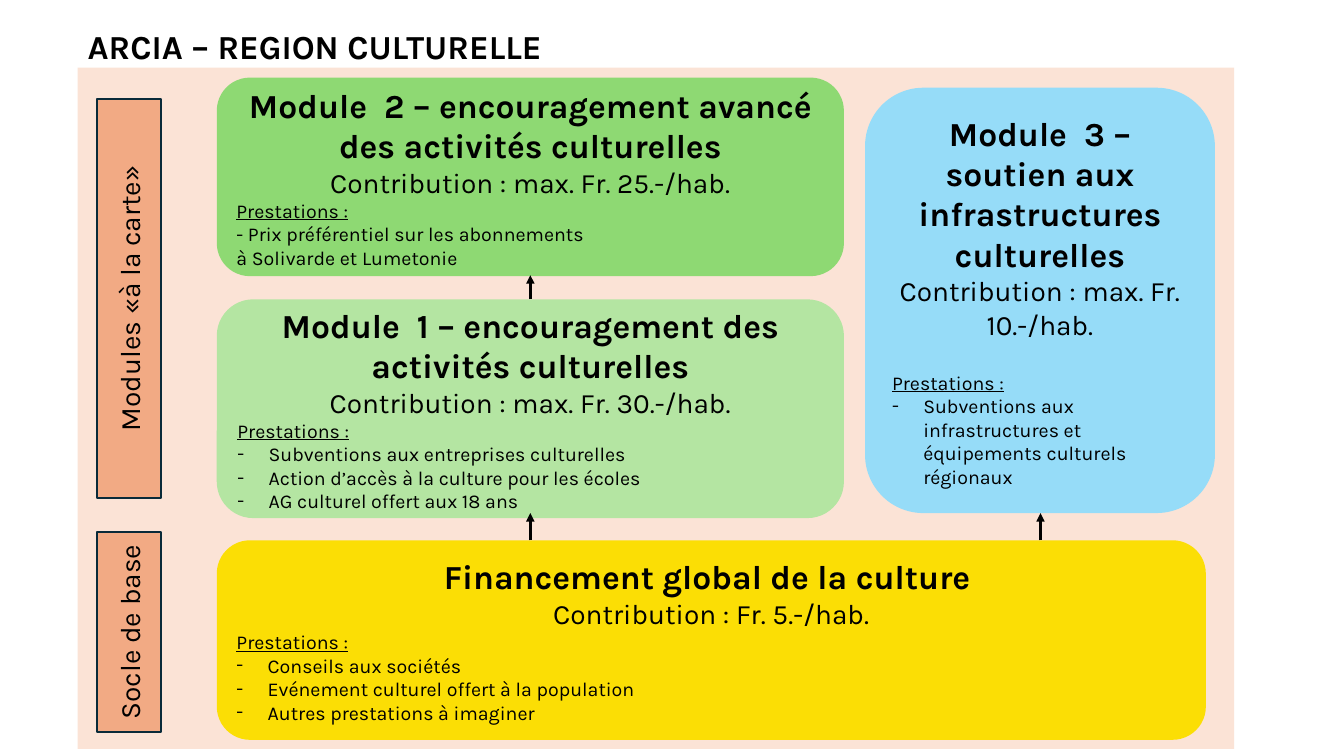
from copy import deepcopy
from dataclasses import dataclass

from lxml.etree import SubElement
from pptx import Presentation
from pptx.dml.color import RGBColor
from pptx.enum.shapes import MSO_CONNECTOR, MSO_SHAPE
from pptx.enum.text import MSO_ANCHOR, MSO_AUTO_SIZE, PP_ALIGN
from pptx.oxml.ns import qn
from pptx.shapes.autoshape import Shape
from pptx.slide import Slide
from pptx.text.text import _Paragraph as Paragraph
from pptx.util import Inches, Pt

FONT = "Karla"
BLACK = RGBColor(0x00, 0x00, 0x00)
PEACH = RGBColor(0xFB, 0xE3, 0xD6)
YELLOW = RGBColor(0xFB, 0xDE, 0x05)
LIGHT_GREEN = RGBColor(0xB4, 0xE5, 0xA2)
GREEN = RGBColor(0x8E, 0xD9, 0x73)
BLUE = RGBColor(0x96, 0xDC, 0xF8)
ORANGE = RGBColor(0xF2, 0xAA, 0x84)
NAVY = RGBColor(0x09, 0x2A, 0x39)


@dataclass
class Box:
    left: float
    top: float
    width: float
    height: float


@dataclass
class Module:
    box: Box
    color: RGBColor
    heading: str
    contribution: str
    services: list[str]
    bulleted: bool = True
    gap_before_services: float = 0


@dataclass
class SideLabel:
    box: Box
    text: str


@dataclass
class Arrow:
    x: float
    bottom: float
    top: float


BACKDROP = Box(0.77, 0.67, 11.47, 6.76)
TITLE = Box(0.77, 0.21, 5.93, 0.5)

MODULES = [
    Module(Box(2.15, 5.36, 9.81, 1.98), YELLOW,
           "Financement global de la culture ", "Contribution : Fr. 5.-/hab.",
           ["Conseils aux sociétés", "Evénement culturel offert à la population",
            "Autres prestations à imaginer"]),
    Module(Box(2.15, 2.97, 6.22, 2.17), LIGHT_GREEN,
           "Module  1 – encouragement des activités culturelles",
           "Contribution : max. Fr. 30.-/hab.",
           ["Subventions aux entreprises culturelles",
            "Action d’accès à la culture pour les écoles",
            "AG culturel offert aux 18 ans"]),
    Module(Box(2.15, 0.77, 6.22, 1.97), GREEN,
           "Module  2 – encouragement avancé des activités culturelles",
           "Contribution : max. Fr. 25.-/hab.",
           ["- Prix préférentiel sur les abonnements \và Solivarde et Lumetonie"],
           bulleted=False),
    Module(Box(8.58, 0.87, 3.47, 4.22), BLUE,
           "Module  3 – soutien aux infrastructures culturelles",
           "Contribution : max. Fr. 10.-/hab.",
           ["Subventions aux infrastructures et équipements culturels régionaux"],
           gap_before_services=21),
]

SIDE_LABELS = [
    SideLabel(Box(0.29, 5.95, 1.98, 0.64), "Socle de base"),
    SideLabel(Box(-0.7, 2.64, 3.96, 0.64), "Modules «à la carte»"),
]

ARROWS = [Arrow(10.32, 5.36, 5.09), Arrow(5.26, 5.36, 5.09), Arrow(5.26, 2.97, 2.73)]


def add_box(slide: Slide, preset: MSO_SHAPE, box: Box, color: RGBColor) -> Shape:
    shape = slide.shapes.add_shape(preset, Inches(box.left), Inches(box.top),
                                   Inches(box.width), Inches(box.height))
    shape.shadow.inherit = False
    shape.fill.solid()
    shape.fill.fore_color.rgb = color
    shape.line.fill.background()
    shape.text_frame.word_wrap = True
    shape.text_frame.vertical_anchor = MSO_ANCHOR.MIDDLE
    return shape


def format_paragraph(paragraph: Paragraph, size: float, bold: bool = False,
                     underline: bool = False,
                     alignment: PP_ALIGN = PP_ALIGN.LEFT) -> None:
    """Format every run, and give line breaks the same character properties."""
    paragraph.alignment = alignment
    for run in paragraph.runs:
        run.font.name = FONT
        run.font.size = Pt(size)
        run.font.bold = bold
        run.font.underline = underline
        run.font.color.rgb = BLACK
    for line_break in paragraph._p.findall(qn("a:br")):
        line_break.append(deepcopy(paragraph.runs[0]._r.rPr))


def add_dash_bullet(paragraph: Paragraph) -> None:
    properties = paragraph._p.get_or_add_pPr()
    properties.set("marL", str(Inches(0.31)))
    properties.set("indent", str(-Inches(0.31)))
    SubElement(properties, qn("a:buFont"), typeface=FONT)
    SubElement(properties, qn("a:buChar"), char="-")


def add_module(slide: Slide, module: Module) -> None:
    shape = add_box(slide, MSO_SHAPE.ROUNDED_RECTANGLE, module.box, module.color)
    text_frame = shape.text_frame
    text_frame.text = "\n".join([module.heading, module.contribution, "Prestations :"])
    heading, contribution, services_heading = text_frame.paragraphs
    format_paragraph(heading, 24, bold=True, alignment=PP_ALIGN.CENTER)
    format_paragraph(contribution, 20, alignment=PP_ALIGN.CENTER)
    format_paragraph(services_heading, 14, underline=True)
    if module.gap_before_services:
        services_heading.space_before = Pt(module.gap_before_services)
    for service in module.services:
        paragraph = text_frame.add_paragraph()
        paragraph.text = service
        if module.bulleted:
            add_dash_bullet(paragraph)
        format_paragraph(paragraph, 14)


def add_side_label(slide: Slide, label: SideLabel) -> None:
    shape = add_box(slide, MSO_SHAPE.RECTANGLE, label.box, ORANGE)
    shape.rotation = 270
    shape.line.color.rgb = NAVY
    shape.line.width = Pt(1.5)
    shape.text_frame.text = label.text
    format_paragraph(shape.text_frame.paragraphs[0], 20, alignment=PP_ALIGN.CENTER)


def add_arrow(slide: Slide, arrow: Arrow) -> None:
    connector = slide.shapes.add_connector(
        MSO_CONNECTOR.STRAIGHT, Inches(arrow.x), Inches(arrow.bottom),
        Inches(arrow.x), Inches(arrow.top))
    connector.line.color.rgb = BLACK
    connector.line.width = Pt(2)
    SubElement(connector.line._get_or_add_ln(), qn("a:tailEnd"), type="triangle")
    SubElement(connector._element.spPr, qn("a:effectLst"))


def set_title(slide: Slide, text: str) -> None:
    title = slide.shapes.title
    title.left, title.top = Inches(TITLE.left), Inches(TITLE.top)
    title.width, title.height = Inches(TITLE.width), Inches(TITLE.height)
    text_frame = title.text_frame
    text_frame.text = text
    text_frame.word_wrap = True
    text_frame.auto_size = MSO_AUTO_SIZE.NONE
    text_frame.vertical_anchor = MSO_ANCHOR.TOP
    format_paragraph(text_frame.paragraphs[0], 24, bold=True)


def main() -> None:
    presentation = Presentation()
    presentation.slide_width = Inches(13.33)
    presentation.slide_height = Inches(7.5)
    title_only_layout = presentation.slide_layouts[5]
    slide = presentation.slides.add_slide(title_only_layout)

    set_title(slide, "ARCIA – REGION CULTURELLE")
    add_box(slide, MSO_SHAPE.RECTANGLE, BACKDROP, PEACH)
    for module in MODULES:
        add_module(slide, module)
    for label in SIDE_LABELS:
        add_side_label(slide, label)
    for arrow in ARROWS:
        add_arrow(slide, arrow)

    presentation.save("out.pptx")


if __name__ == "__main__":
    main()
